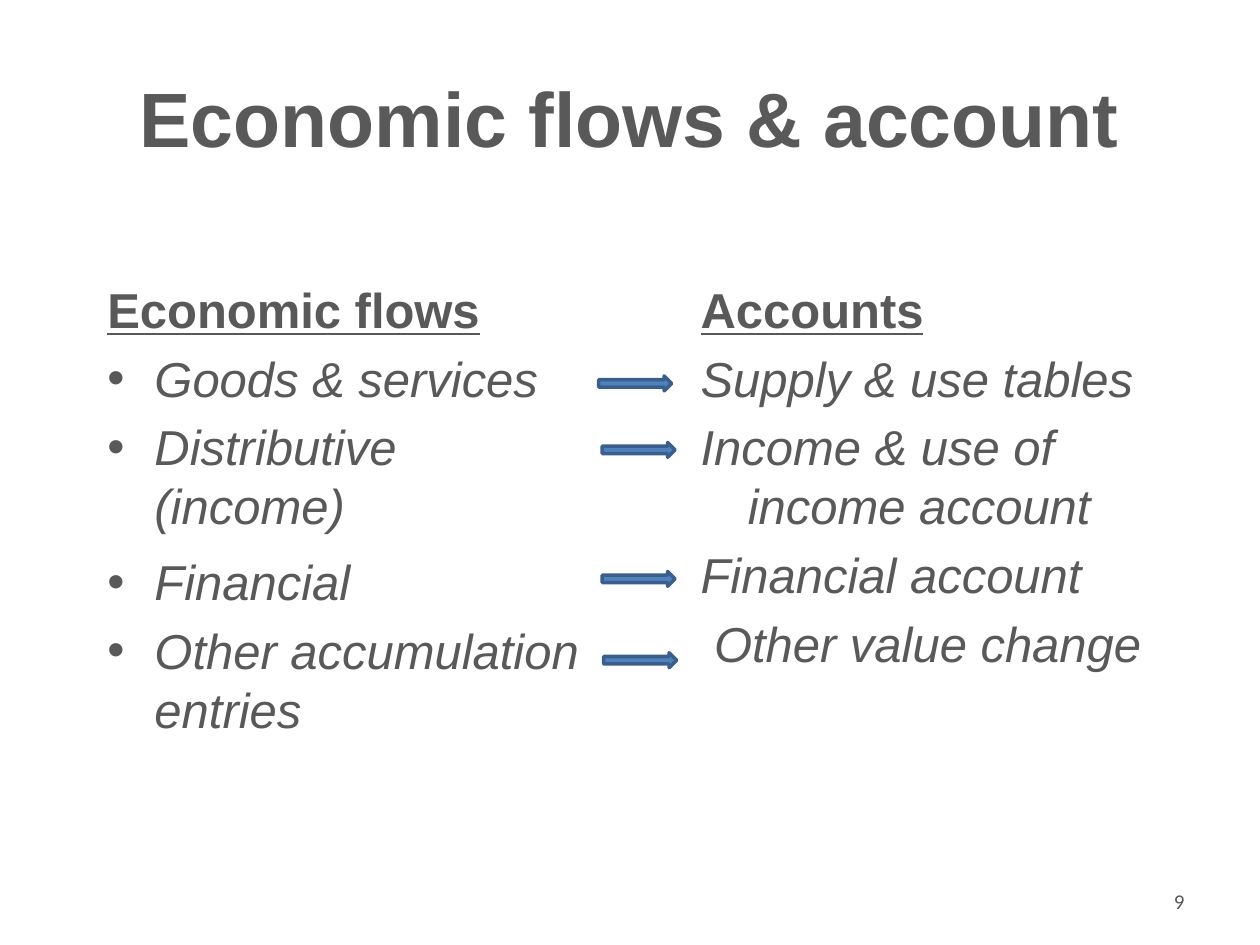
from dataclasses import dataclass

from lxml import etree
from pptx import Presentation
from pptx.dml.color import RGBColor
from pptx.enum.shapes import MSO_SHAPE
from pptx.enum.text import MSO_ANCHOR, MSO_AUTO_SIZE, PP_ALIGN
from pptx.oxml.ns import qn
from pptx.util import Cm, Pt

RIGHT_ARROW = MSO_SHAPE.RIGHT_ARROW
MIDDLE = MSO_ANCHOR.MIDDLE
NO_AUTOFIT = MSO_AUTO_SIZE.NONE
CENTER, RIGHT = PP_ALIGN.CENTER, PP_ALIGN.RIGHT

GREY, BLUE, DARK_BLUE, WHITE = "595959", "4F81BD", "3A5F8C", "FFFFFF"
HANGING = 0.95  # cm
TWO_CONTENT_LAYOUT = 3


@dataclass
class Box:
    left: float
    top: float
    width: float
    height: float


@dataclass
class Entry:
    lines: tuple[str, ...]
    heading: bool = False
    bullet: bool = False
    space_before: float = 5.6
    first_line: float = -HANGING


def rgb(value: str) -> RGBColor:
    return RGBColor.from_string(value)


def place(shape, box: Box) -> None:
    """Position a text shape on a translucent white ground."""
    shape.left, shape.top = Cm(box.left), Cm(box.top)
    shape.width, shape.height = Cm(box.width), Cm(box.height)
    shape.fill.solid()
    shape.fill.fore_color.rgb = rgb(WHITE)
    color = shape._element.spPr.find(qn("a:solidFill")).find(qn("a:srgbClr"))
    etree.SubElement(color, qn("a:alpha")).set("val", "60000")


def add_run(paragraph, text: str, size: float, font: str = "Arial", bold: bool = False,
            italic: bool = False, underline: bool = False) -> None:
    run = paragraph.add_run()
    run.text = text
    run.font.name, run.font.size = font, Pt(size)
    run.font.bold, run.font.italic, run.font.underline = bold, italic, underline
    run.font.color.rgb = rgb(GREY)


def set_bullet(paragraph, entry: Entry) -> None:
    properties = paragraph._p.get_or_add_pPr()
    properties.set("marL", str(Cm(HANGING)))
    properties.set("indent", str(Cm(entry.first_line)))
    if entry.bullet:
        etree.SubElement(properties, qn("a:buChar")).set("char", "•")
    else:
        etree.SubElement(properties, qn("a:buNone"))


def fill_column(placeholder, box: Box, entries: list[Entry]) -> None:
    place(placeholder, box)
    frame = placeholder.text_frame
    frame.auto_size = NO_AUTOFIT
    for number, entry in enumerate(entries):
        paragraph = frame.add_paragraph() if number else frame.paragraphs[0]
        set_bullet(paragraph, entry)
        paragraph.space_before = Pt(entry.space_before if number else 0)
        for line_number, line in enumerate(entry.lines):
            if line_number:
                paragraph.add_line_break()
            add_run(paragraph, line, 28, bold=entry.heading,
                    italic=not entry.heading, underline=entry.heading)


def add_arrow(slide, left: float, top: float) -> None:
    arrow = slide.shapes.add_shape(RIGHT_ARROW, Cm(left), Cm(top), Cm(1.47), Cm(0.3))
    arrow.shadow.inherit = False
    arrow.fill.solid()
    arrow.fill.fore_color.rgb = rgb(BLUE)
    arrow.line.color.rgb = rgb(DARK_BLUE)
    arrow.line.width = Pt(2)


FLOWS = [
    Entry(("Economic flows",), heading=True),
    Entry(("Goods & services",), bullet=True),
    Entry(("Distributive", "(income)"), bullet=True),
    Entry(("Financial",), bullet=True, space_before=9.8),
    Entry(("Other accumulation entries",), bullet=True),
]
ACCOUNTS = [
    Entry(("Accounts",), heading=True),
    Entry(("Supply & use tables",)),
    Entry(("Income & use of income account",)),
    Entry(("Financial account",)),
    Entry(("Other value change",), first_line=-0.68),
]
FLOW_TO_ACCOUNT = [(12.07, 7.58), (12.14, 8.92), (12.14, 11.52), (12.17, 13.16)]


def main() -> None:
    presentation = Presentation()
    presentation.slide_width, presentation.slide_height = Cm(25.4), Cm(19.05)
    slide = presentation.slides.add_slide(presentation.slide_layouts[TWO_CONTENT_LAYOUT])

    # Title
    title = slide.shapes.title
    place(title, Box(1.27, 0.76, 22.86, 3.18))
    title.text_frame.auto_size = NO_AUTOFIT
    title.text_frame.vertical_anchor = MIDDLE
    heading = title.text_frame.paragraphs[0]
    heading.alignment = CENTER
    add_run(heading, "Economic flows & account", 44, bold=True)

    # Flows on the left, their accounts on the right
    fill_column(slide.placeholders[1], Box(1.91, 5.51, 10.8, 12.07), FLOWS)
    fill_column(slide.placeholders[2], Box(13.87, 5.51, 10.74, 12.27), ACCOUNTS)

    # Page number
    page_number = slide.shapes.add_textbox(0, 0, 0, 0)
    place(page_number, Box(18.21, 17.65, 5.92, 1.02))
    page_number.text_frame.word_wrap = True
    page_number.text_frame.vertical_anchor = MIDDLE
    number = page_number.text_frame.paragraphs[0]
    number.alignment = RIGHT
    add_run(number, "9", 12, font="Calibri")

    # Arrows from each flow to its account
    for left, top in FLOW_TO_ACCOUNT:
        add_arrow(slide, left, top)

    presentation.save("out.pptx")


if __name__ == "__main__":
    main()
